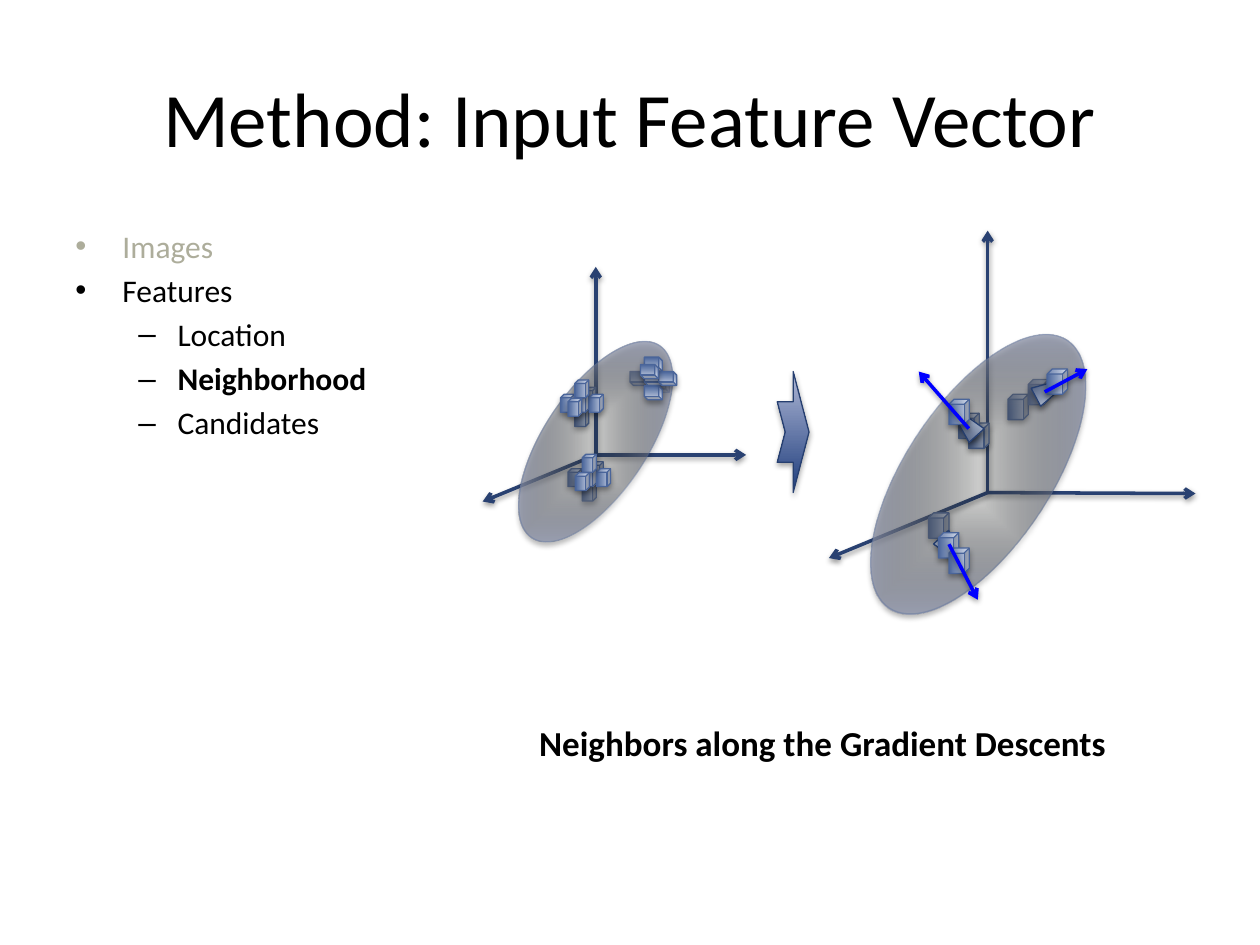
from lxml import etree
from pptx import Presentation
from pptx import util as u
from pptx.dml.color import RGBColor
from pptx.enum import shapes, text
from pptx.oxml import parse_xml
from pptx.oxml.ns import nsdecls, qn

COLORS = {
    "black": "000000", "muted": "ADAD9B", "axis": "294171", "descent": "0000FF",
    "cube": "4A659A", "cube_light": "C7D1E4", "patch": "314367", "edge": "263F70",
    "core": "2D2F2B", "rim": "B0B8D6", "block": "1E3D7C",
}
LINEAR = '<a:lin ang="{}" scaled="0"/>'
RADIAL = '<a:path path="shape"><a:fillToRect l="50000" t="50000" r="50000" b="50000"/></a:path>'
SHADOW = ('<a:effectLst {}><a:outerShdw blurRad="40000" dist="{}" dir="5400000" rotWithShape="0">'
          '<a:srgbClr val="000000"><a:alpha val="{}"/></a:srgbClr></a:outerShdw></a:effectLst>')
# Name: preset, gradient start, start opacity, gradient end, gradient kind, outline, outline opacity
STYLES = {
    "cube": (shapes.MSO_SHAPE.CUBE, "cube", 100, "cube_light", LINEAR.format(0), "cube", 100),
    "patch": (shapes.MSO_SHAPE.TRAPEZOID, "patch", 100, "cube_light", LINEAR.format(0), "edge", 100),
    "cloud": (shapes.MSO_SHAPE.OVAL, "core", 18, "rim", RADIAL, "cube", 30),
    "block": (shapes.MSO_SHAPE.NOTCHED_RIGHT_ARROW, "block", 100, "rim", LINEAR.format(16200000),
              "edge", 100),
}


def add_solid(parent, style, left, top, width, height, rotation=0):
    preset, start, opacity, end, kind, outline, outline_opacity = STYLES[style]
    shape = parent.shapes.add_shape(preset, u.Cm(left), u.Cm(top), u.Cm(width), u.Cm(height))
    shape.rotation = rotation
    shape.line.color.rgb = RGBColor.from_string(COLORS[outline])
    shape.line.width = u.Pt(0.75)
    properties = shape._element.spPr
    line = properties.find(qn("a:ln"))
    if outline_opacity < 100:
        color = line.find(".//" + qn("a:srgbClr"))
        etree.SubElement(color, qn("a:alpha")).set("val", str(outline_opacity * 1000))
    line.addprevious(parse_xml(
        f'<a:gradFill {nsdecls("a")} rotWithShape="1"><a:gsLst>'
        f'<a:gs pos="0"><a:srgbClr val="{COLORS[start]}"><a:alpha val="{opacity * 1000}"/></a:srgbClr></a:gs>'
        f'<a:gs pos="100000"><a:srgbClr val="{COLORS[end]}"/></a:gs></a:gsLst>{kind}</a:gradFill>'))
    properties.append(parse_xml(SHADOW.format(nsdecls("a"), 23000, 35000)))


def add_arrow(parent, start, end, color):
    points = [u.Cm(value) for value in (*start, *end)]
    connector = parent.shapes.add_connector(shapes.MSO_CONNECTOR.STRAIGHT, *points)
    connector.line.color.rgb = RGBColor.from_string(COLORS[color])
    connector.line.width = u.Pt(2)
    properties = connector._element.spPr
    etree.SubElement(properties.find(qn("a:ln")), qn("a:tailEnd")).set("type", "arrow")
    properties.append(parse_xml(SHADOW.format(nsdecls("a"), 20000, 38000)))


presentation = Presentation()
presentation.slide_width, presentation.slide_height = u.Cm(25.4), u.Cm(19.05)
slide = presentation.slides.add_slide(presentation.slide_layouts[6])

# Title and caption
for words, box, size, bold, wrap, align in (
    ("Method: Input Feature Vector", (1.27, 0.76, 22.86, 3.18), 44, False, True, text.PP_ALIGN.CENTER),
    ("Neighbors along the Gradient Descents", (10.62, 14.4, 12.04, 1.12), 20, True, False,
     text.PP_ALIGN.LEFT),
):
    frame = slide.shapes.add_textbox(*[u.Cm(value) for value in box]).text_frame
    frame.text = words
    frame.word_wrap = wrap
    frame.vertical_anchor = text.MSO_ANCHOR.MIDDLE
    paragraph = frame.paragraphs[0]
    paragraph.alignment = align
    font = paragraph.runs[0].font
    font.name, font.size, font.bold = "Calibri", u.Pt(size), bold
    font.color.rgb = RGBColor.from_string(COLORS["black"])

# Outline: words, level, colour, bold
outline_items = [
    ("Images", 0, "muted", False), ("Features", 0, "black", False), ("Location", 1, "black", False),
    ("Neighborhood", 1, "black", True), ("Candidates", 1, "black", False),
]
bullets = [("•", 0.95, -0.95), ("–", 2.06, -0.79)]
frame = slide.shapes.add_textbox(u.Cm(1.27), u.Cm(4.45), u.Cm(6.99), u.Cm(12.57)).text_frame
frame.word_wrap = True
frame.text = "\n".join(item[0] for item in outline_items)
for paragraph, (words, level, color, bold) in zip(frame.paragraphs, outline_items):
    mark, margin, indent = bullets[level]
    paragraph.level = level
    paragraph.space_before = u.Pt(3.6)
    properties = paragraph._p.get_or_add_pPr()
    properties.set("marL", str(u.Cm(margin)))
    properties.set("indent", str(u.Cm(indent)))
    etree.SubElement(properties, qn("a:buFont")).set("typeface", "Arial")
    etree.SubElement(properties, qn("a:buChar")).set("char", mark)
    font = paragraph.runs[0].font
    font.name, font.size, font.bold = "Calibri", u.Pt(18), bold
    font.color.rgb = RGBColor.from_string(COLORS[color])

# Right diagram: axes and the cubes behind the cloud
right = slide.shapes.add_group_shape()
for tip in ((19.91, 4.65), (24.1, 9.95), (16.71, 11.25)):
    add_arrow(right, (19.91, 9.93), tip, "axis")
cube_size = (0.41, 0.51)
for corner in ((19.53, 8.53), (18.72, 10.34), (19.33, 8.33), (20.32, 7.95), (20.73, 7.65)):
    add_solid(right, "cube", *corner, *cube_size)
add_solid(right, "cloud", 18.26, 6.32, 2.92, 6.48, 33.6)

# Right diagram: patches, front cubes and descent arrows
for left, top, rotation in ((19.33, 8.38, 318), (18.92, 10.77, 138), (20.88, 7.67, 62)):
    add_solid(right, "patch", left, top, 0.41, 0.46, rotation)
for corner in ((18.92, 10.74), (19.13, 8.05), (21.11, 7.44)):
    add_solid(right, "cube", *corner, *cube_size)
add_arrow(right, (21.06, 7.9), (21.92, 7.44), "descent")
add_arrow(right, (19.53, 8.64), (18.52, 7.49), "descent")
add_solid(right, "cube", 19.13, 11.05, *cube_size)
add_arrow(right, (19.13, 10.97), (19.71, 12.09), "descent")

# Left diagram: each cluster is a cross of cubes, its first ones behind the cloud
left_group = slide.shapes.add_group_shape()
for tip in ((12.01, 5.38), (15.04, 9.17), (9.73, 10.11)):
    add_arrow(left_group, (12.01, 9.17), tip, "axis")
cross = [(0.14, -0.14), (0, 0.29), (-0.29, 0), (0, 0), (0.29, 0), (0, -0.29), (-0.14, 0.08)]
# Centre cube, rotation, number of cubes behind the cloud
clusters = [(13.03, 7.45, 90, 2), (11.59, 7.95, 0, 2), (11.74, 9.45, 0, 3)]
for in_front in (False, True):
    if in_front:
        add_solid(left_group, "cloud", 10.97, 6.58, 2.08, 4.65, 33.6)
    for left, top, rotation, behind in (clusters[::-1] if in_front else clusters):
        for dx, dy in (cross[behind:] if in_front else cross[:behind]):
            if rotation:
                dx, dy = -dy, dx
            add_solid(left_group, "cube", left + dx, top + dy, 0.28, 0.36, rotation)

# Block arrow between the diagrams
add_solid(slide, "block", 15.67, 7.49, 0.64, 2.44)

presentation.save("out.pptx")
